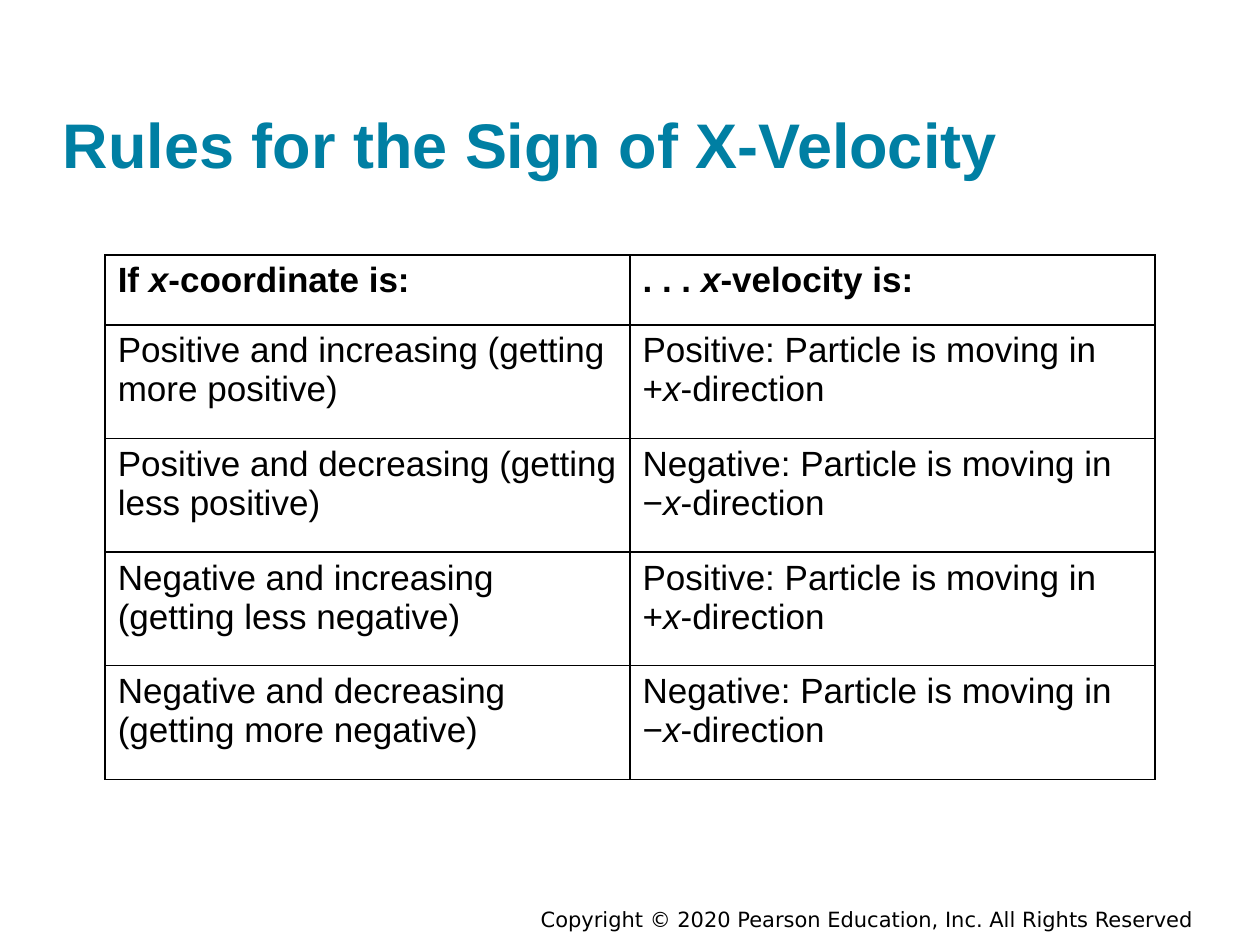
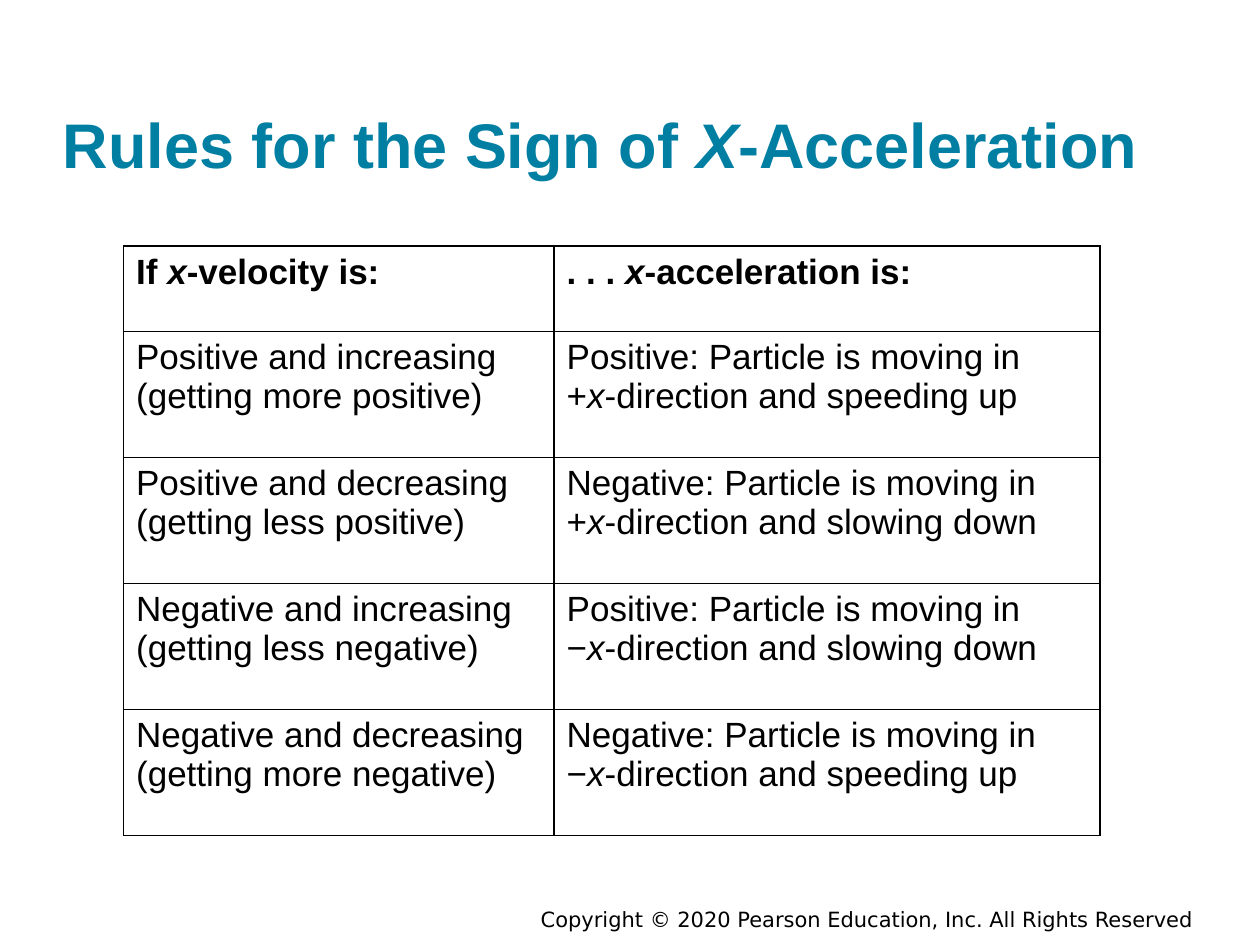
from lxml import etree
from pptx import Presentation
from pptx import util as u
from pptx.dml import color
from pptx.enum import text
from pptx.oxml import ns

COLORS = {"title": "007FA3", "ink": "000000"}
FORMATS = {
    "title": {"name": "Arial", "size": u.Pt(36), "bold": True},
    "head": {"name": "Arial", "size": u.Pt(20), "bold": True},
    "body": {"name": "Arial", "size": u.Pt(20), "bold": False},
    "footer": {"name": "DejaVu Sans", "size": u.Pt(12), "bold": False},
}
FOOTER = "Copyright © 2020 Pearson Education, Inc. All Rights Reserved"

VELOCITY_ROWS = [
    ("If *x*-coordinate is:", ". . . *x*-velocity is:"),
    ("Positive and increasing (getting more positive)",
     "Positive: Particle is moving in +*x*-direction"),
    ("Positive and decreasing (getting less positive)",
     "Negative: Particle is moving in\n−*x*-direction"),
    ("Negative and increasing (getting less negative)",
     "Positive: Particle is moving in\n+*x*-direction"),
    ("Negative and decreasing (getting more negative)",
     "Negative: Particle is moving in\n−*x*-direction"),
]
ACCELERATION_ROWS = [
    ("If *x*-velocity is:", ". . . *x*-acceleration is:"),
    ("Positive and increasing\n(getting more positive)",
     "Positive: Particle is moving in\n+*x*-direction and speeding up"),
    ("Positive and decreasing\n(getting less positive)",
     "Negative: Particle is moving in\n+*x*-direction and slowing down"),
    ("Negative and increasing\n(getting less negative)",
     "Positive: Particle is moving in\n−*x*-direction and slowing down"),
    ("Negative and decreasing\n(getting more negative)",
     "Negative: Particle is moving in\n−*x*-direction and speeding up"),
]


class Deck:
    def __init__(self):
        self.prs = Presentation()
        self.prs.slide_width, self.prs.slide_height = u.Cm(25.4), u.Cm(19.05)
        self.s = None

    def slide(self, title):
        self.s = self.prs.slides.add_slide(self.prs.slide_layouts[6])
        self.box(FOOTER, (10.44, 18.01, 13.87, 1.02), "footer", inset=0.25,
                 anchor=text.MSO_ANCHOR.MIDDLE, align=text.PP_ALIGN.RIGHT)
        self.box(title, (1.27, 0.61, 22.86, 3.05), "title",
                 anchor=text.MSO_ANCHOR.BOTTOM)

    def add_text(self, tf, content, style, ink="ink", align=text.PP_ALIGN.LEFT):
        for i, line in enumerate(content.split("\n")):
            p = tf.add_paragraph() if i else tf.paragraphs[0]
            p.alignment = align
            for j, part in enumerate(line.split("*")):
                r = p.add_run()
                r.text = part
                for key, value in FORMATS[style].items():
                    setattr(r.font, key, value)
                r.font.italic = j % 2 == 1
                r.font.color.rgb = color.RGBColor.from_string(COLORS[ink])

    def box(self, content, area, style, anchor, inset=0, align=text.PP_ALIGN.LEFT):
        sp = self.s.shapes.add_textbox(*map(u.Cm, area))
        tf = sp.text_frame
        tf.word_wrap = True
        tf.vertical_anchor = anchor
        for side in ("left", "right", "top", "bottom"):
            setattr(tf, f"margin_{side}", u.Cm(inset))
        self.add_text(tf, content, style, "title" if style == "title" else "ink", align)

    def borders(self, cell):
        tc_pr = cell._tc.get_or_add_tcPr()
        for edge in ("lnL", "lnR", "lnT", "lnB"):
            ln = etree.SubElement(tc_pr, ns.qn(f"a:{edge}"), w=str(u.Pt(1)))
            fill = etree.SubElement(ln, ns.qn("a:solidFill"))
            etree.SubElement(fill, ns.qn("a:srgbClr"), val=COLORS["ink"])

    def table(self, rows, left, top, widths, head_height, row_height):
        heights = [head_height] + [row_height] * (len(rows) - 1)
        area = (left, top, sum(widths), sum(heights))
        tbl = self.s.shapes.add_table(len(rows), len(widths), *map(u.Cm, area)).table
        tbl.horz_banding = tbl.first_row = False
        for col, width in zip(tbl.columns, widths):
            col.width = u.Cm(width)
        for i, (row, height) in enumerate(zip(rows, heights)):
            tbl.rows[i].height = u.Cm(height)
            for j, content in enumerate(row):
                cell = tbl.cell(i, j)
                self.borders(cell)
                cell.fill.background()
                self.add_text(cell.text_frame, content, "body" if i else "head")


def main():
    deck = Deck()
    deck.slide("Rules for the Sign of X-Velocity")
    deck.table(VELOCITY_ROWS, 2.12, 5.14, (10.58, 10.58), 1.41, 2.29)
    deck.slide("Rules for the Sign of *X*-Acceleration")
    deck.table(ACCELERATION_ROWS, 2.49, 4.96, (8.68, 11), 1.72, 2.54)
    deck.prs.save("out.pptx")


if __name__ == "__main__":
    main()
